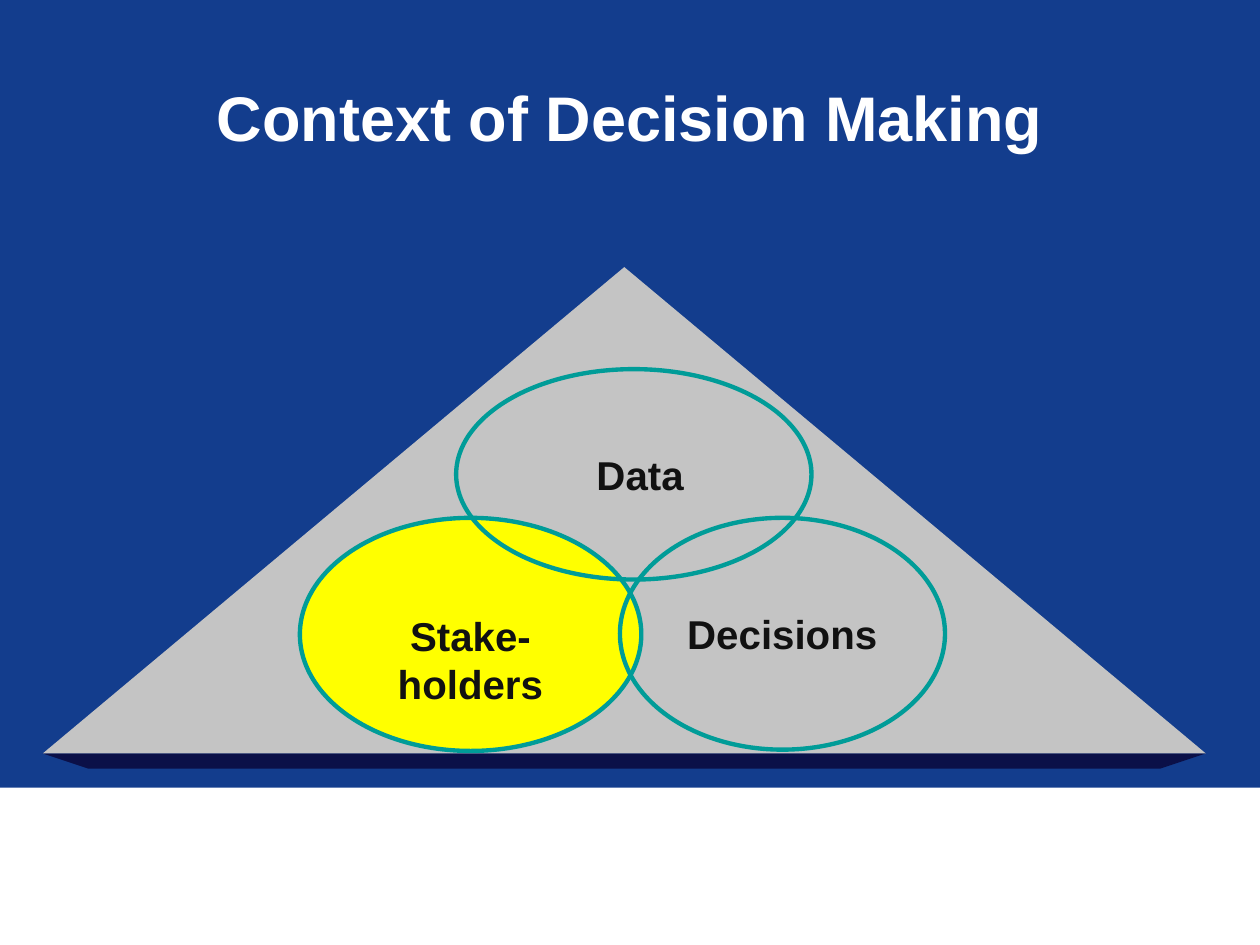
from dataclasses import dataclass

from pptx import Presentation
from pptx.dml.color import RGBColor
from pptx.enum.shapes import MSO_SHAPE
from pptx.enum.text import MSO_ANCHOR, PP_ALIGN
from pptx.util import Inches, Pt


@dataclass(frozen=True)
class Theme:
    back: str = "133D8D"
    white: str = "FFFFFF"
    face: str = "C4C4C4"
    base: str = "0B1048"
    ring: str = "009C98"
    mark: str = "FFFF00"
    ink: str = "111111"
    font: str = "Arial"
    head: int = 36
    label: int = 23
    stroke: float = 2.5


class Board:
    def __init__(self, slide, theme):
        self.slide = slide
        self.theme = theme
        fill = slide.background.fill
        fill.solid()
        fill.fore_color.rgb = RGBColor.from_string(theme.back)

    def style(self, shape, fill=None, line=None):
        shape.shadow.inherit = False
        if fill:
            shape.fill.solid()
            shape.fill.fore_color.rgb = RGBColor.from_string(fill)
        else:
            shape.fill.background()
        if line:
            shape.line.color.rgb = RGBColor.from_string(line)
            shape.line.width = Pt(self.theme.stroke)
        else:
            shape.line.fill.background()

    def shape(self, kind, box, fill=None, line=None):
        shape = self.slide.shapes.add_shape(kind, *map(Inches, box))
        self.style(shape, fill, line)
        return shape

    def outline(self, points, fill):
        start, *rest = [(Inches(x), Inches(y)) for x, y in points]
        form = self.slide.shapes.build_freeform(*start)
        form.add_line_segments(rest, close=True)
        self.style(form.convert_to_shape(), fill)

    def label(self, shape, text, size, color):
        frame = shape.text_frame
        frame.word_wrap = True
        frame.vertical_anchor = MSO_ANCHOR.MIDDLE
        para = frame.paragraphs[0]
        para.alignment = PP_ALIGN.CENTER
        run = para.add_run()
        run.text = text
        font = run.font
        font.name, font.size, font.bold = self.theme.font, Pt(size), True
        font.color.rgb = RGBColor.from_string(color)

    def title(self, text, box):
        shape = self.slide.shapes.add_textbox(*map(Inches, box))
        self.label(shape, text, self.theme.head, self.theme.white)

    def ring(self, text, box, fill=None, left=0.1, top=0.05):
        """Add a labelled ellipse; left and top insets shift its label."""
        shape = self.shape(MSO_SHAPE.OVAL, box, fill, self.theme.ring)
        self.label(shape, text, self.theme.label, self.theme.ink)
        shape.text_frame.margin_left = Inches(left)
        shape.text_frame.margin_top = Inches(top)


def main():
    deck = Presentation()
    deck.slide_width, deck.slide_height = Inches(10), Inches(7.5)
    theme = Theme()
    board = Board(deck.slides.add_slide(deck.slide_layouts[6]), theme)

    board.shape(MSO_SHAPE.RECTANGLE, (0, 6.25, 10, 1.25), theme.white)
    board.outline([(0.34, 5.98), (9.57, 5.98), (9.21, 6.1), (0.7, 6.1)],
                  theme.base)
    board.shape(MSO_SHAPE.ISOSCELES_TRIANGLE, (0.34, 2.12, 9.23, 3.86),
                theme.face)
    board.ring("Stake-holders", (2.38, 4.11, 2.71, 1.85), theme.mark, top=0.45)
    board.ring("Decisions", (4.92, 4.11, 2.58, 1.84))
    board.title("Context of Decision Making", (0.75, 0.3, 8.5, 1.25))
    board.ring("Data", (3.62, 2.93, 2.82, 1.67), left=0.2)

    deck.save("out.pptx")


if __name__ == "__main__":
    main()
